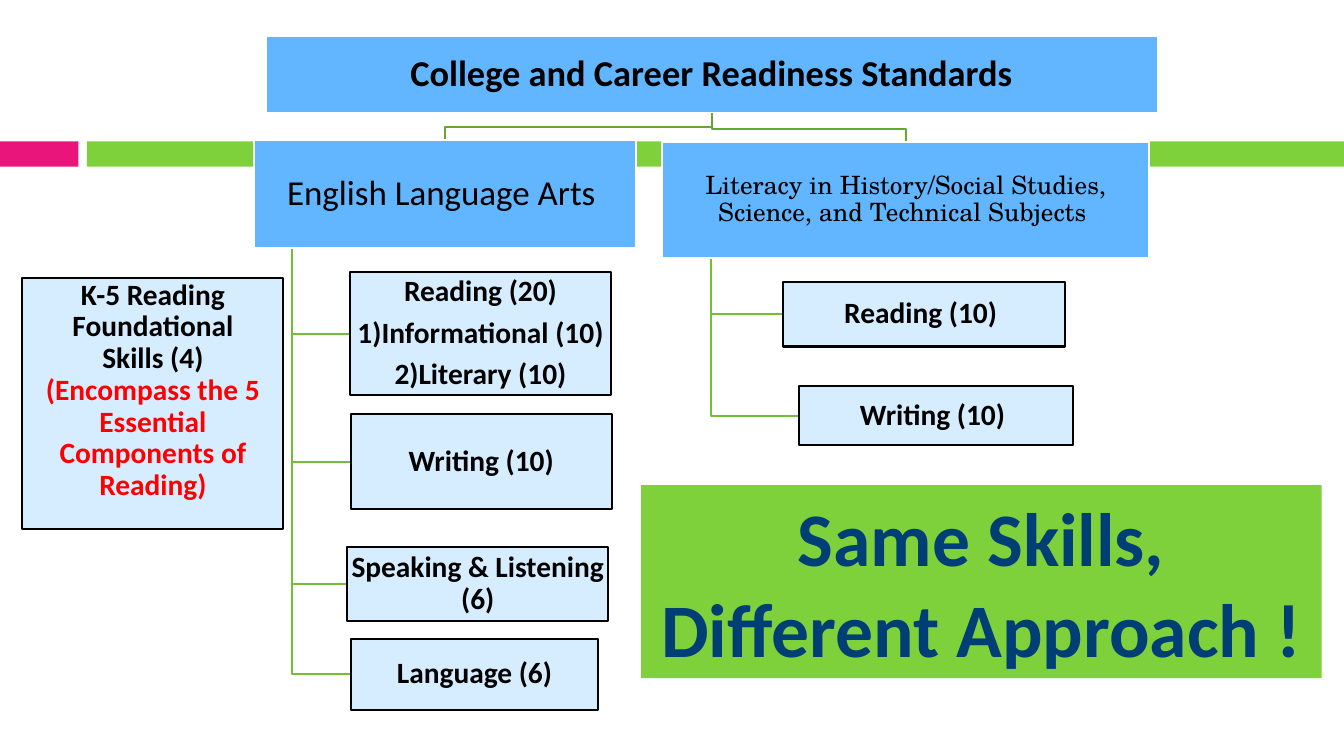
from pptx import Presentation
from pptx.dml.color import RGBColor as RGB
from pptx.enum.shapes import MSO_SHAPE as Shape
from pptx.enum.text import MSO_ANCHOR as Anchor, MSO_AUTO_SIZE as Fit, PP_ALIGN as Align
from pptx.util import Pt

COLORS = {
    "pink": "EA157A", "green": "7FD13B", "blue": "61B6FF", "pale": "D6ECFF",
    "white": "FFFFFF", "black": "000000", "red": "FF0000", "navy": "003F75",
    "stem": "66A72F", "twig": "73BE36",
}
# Boxes are (left, top, width, height) in points
BARS = [("pink", (0, 101, 56, 18)), ("green", (62, 101, 898, 18))]
HEAD = ("College and Career Readiness Standards", (190, 26, 637, 55))
BRANCHES = [
    {
        "text": "English Language Arts ", "box": (181.5, 100, 273, 77),
        "size": 25, "face": "Calibri",
        "leaves": [
            (["Reading (20)", "1)Informational (10)", "2)Literary (10)"],
             (250, 194.5, 186.5, 88)),
            (["Writing (10)"], (250.5, 296, 186.5, 67.5)),
            (["Speaking & Listening (6)"], (248, 391, 186.5, 52.5)),
            (["Language (6)"], (250.5, 456.5, 177, 50.5)),
        ],
    },
    {
        "text": "Literacy in History/Social Studies, Science, and Technical Subjects ",
        "box": (473, 101.5, 348, 83), "size": 18, "face": "TeX Gyre Schola",
        "leaves": [
            (["Reading (10) "], (559.5, 201.5, 201, 46)),
            (["Writing (10) "], (570.5, 276, 196, 42)),
        ],
    },
]
SKILLS = ("K-5 Reading Foundational Skills (4) ",
          "(Encompass the 5 Essential Components of Reading)")
SKILLS_BOX = (16, 198.5, 186.5, 179.5)
SLOGAN = ("Same Skills, Different Approach !", (458, 346.5, 486, 138))
BEND = 9.5    # height of a stem's bend above its branch
INDENT = 0.1  # place of the twigs along a branch's width


def color(name):
    return RGB.from_string(COLORS[name])


def paint(shape, fill, line=None):
    shape.fill.solid()
    shape.fill.fore_color.rgb = color(fill)
    if line:
        shape.line.color.rgb = color(line)
        shape.line.width = Pt(1.5)
    else:
        shape.line.fill.background()


def block(slide, box, fill, line=None):
    shape = slide.shapes.add_shape(Shape.RECTANGLE, *map(Pt, box))
    shape.shadow.inherit = False
    paint(shape, fill, line)
    return shape


def write(shape, lines, size, bold=True, face="Calibri", ink="black",
          pad=(1, 1, 1, 1), tight=True):
    """Fill the shape with centred lines; pad is left, top, right, bottom."""
    frame = shape.text_frame
    frame.word_wrap = True
    frame.auto_size = Fit.NONE
    frame.vertical_anchor = Anchor.MIDDLE
    (frame.margin_left, frame.margin_top,
     frame.margin_right, frame.margin_bottom) = map(Pt, pad)
    frame.text = "\n".join(lines)
    for para in frame.paragraphs:
        para.alignment = Align.CENTER
        if tight:
            para.line_spacing = 0.9
            para.space_after = Pt(round(size * 0.35))
        font = para.font
        font.name, font.size, font.bold = face, Pt(size), bold
        font.color.rgb = color(ink)
    return frame


def trace(slide, points, ink):
    start, *rest = [(Pt(x), Pt(y)) for x, y in points]
    form = slide.shapes.build_freeform(*start)
    form.add_line_segments(rest, close=False)
    line = form.convert_to_shape()
    line.shadow.inherit = False
    line.fill.background()
    line.line.color.rgb = color(ink)
    line.line.width = Pt(1.5)


def link(slide, branch):
    """Draw the stem down to a branch and the twigs to its leaves."""
    left, top, wide, high = branch["box"]
    x, y, w, h = HEAD[1]
    hub, mid = x + w / 2, left + wide / 2
    trace(slide, [(hub, y + h), (hub, top - BEND), (mid, top - BEND), (mid, top)],
          "stem")
    trunk = left + INDENT * wide
    for _, (x, y, w, h) in branch["leaves"]:
        level = y + h / 2
        trace(slide, [(trunk, top + high), (trunk, level), (x, level)], "twig")


def main():
    deck = Presentation()
    deck.slide_width, deck.slide_height = Pt(960), Pt(540)
    slide = deck.slides.add_slide(deck.slide_layouts[5])

    title = slide.shapes.title
    text, box = HEAD
    title.left, title.top, title.width, title.height = map(Pt, box)
    paint(title, "blue", "white")
    write(title, [text], 26)

    for fill, box in BARS:
        block(slide, box, fill)
    for branch in BRANCHES:
        link(slide, branch)
    for branch in BRANCHES:
        write(block(slide, branch["box"], "blue", "white"), [branch["text"]],
              branch["size"], bold=False, face=branch["face"])
        for lines, box in branch["leaves"]:
            write(block(slide, box, "pale", "black"), lines, 21)

    text, box = SLOGAN
    write(block(slide, box, "green"), [text], 54, ink="navy",
          pad=(7, 4, 7, 4), tight=False)

    plain, vivid = SKILLS
    frame = write(block(slide, SKILLS_BOX, "pale", "black"), [plain], 21,
                  pad=(15, 0, 15, 18))
    run = frame.paragraphs[0].add_run()
    run.text = vivid
    run.font.color.rgb = color("red")

    deck.save("out.pptx")


if __name__ == "__main__":
    main()
